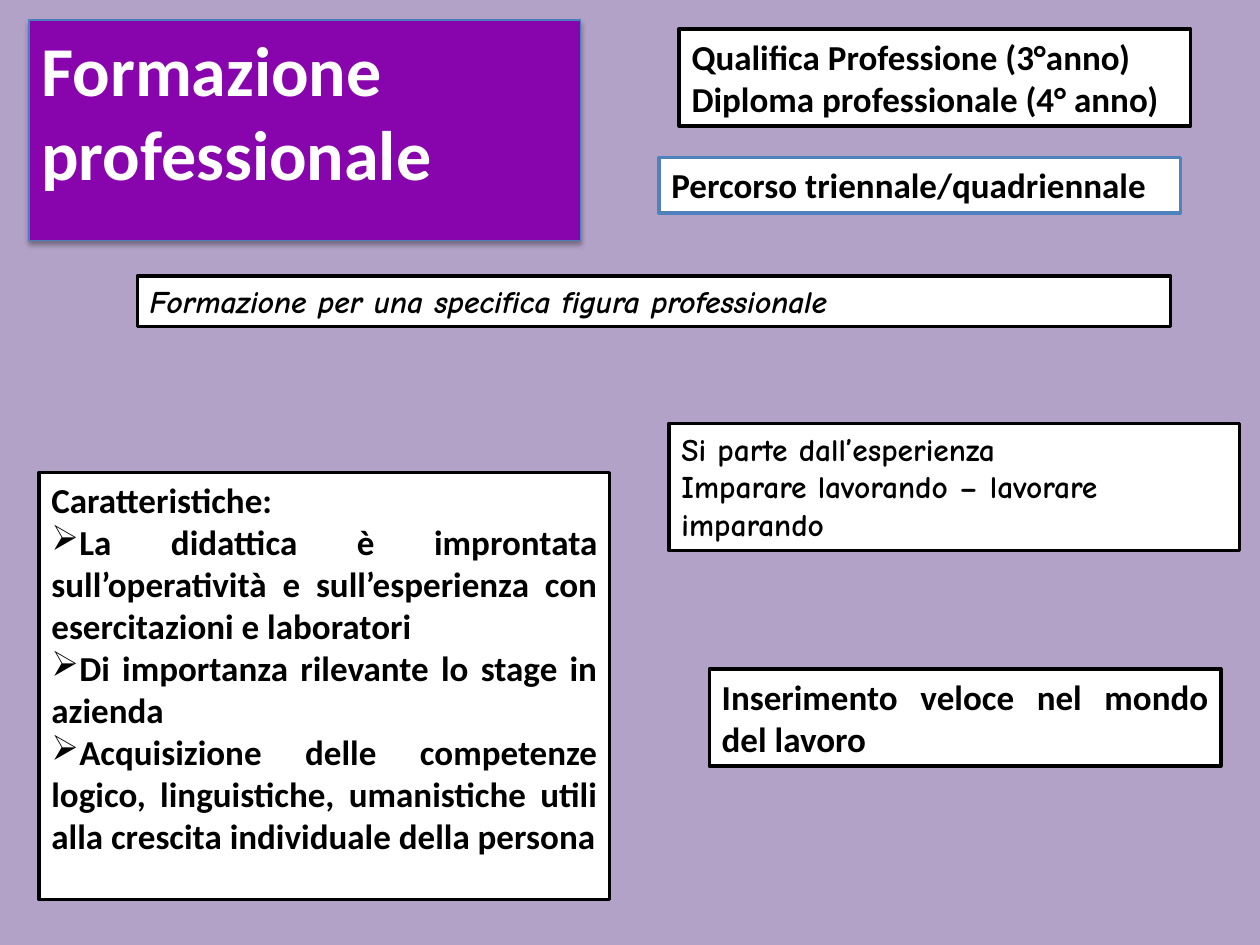
from lxml import etree
from pptx import Presentation
from pptx import util as u
from pptx.dml.color import RGBColor
from pptx.enum import shapes, text
from pptx.oxml import ns

LEFT, JUSTIFY = text.PP_ALIGN.LEFT, text.PP_ALIGN.JUSTIFY
BLACK, WHITE = "000000", "FFFFFF"
BULLET = "➢"


def color(value):
    return RGBColor.from_string(value)


def add_xml(parent, tag, **attributes):
    return etree.SubElement(parent, ns.qn(tag), attributes)


deck = Presentation()
deck.slide_width, deck.slide_height = u.Inches(10), u.Inches(7.5)
page = deck.slides.add_slide(deck.slide_layouts[6])
page.background.fill.solid()
page.background.fill.fore_color.rgb = color("B3A2C7")

# Text styles
body = {"name": "Calibri", "size": u.Pt(20), "bold": True}
comic = {"name": "Comic Neue", "size": u.Pt(18), "bold": True}
heading = body | {"size": u.Pt(40)}

# Boxes: place, fill, line colour, line width, text colour, alignment, style, paragraphs
boxes = [
    ((5.23, 1.25, 4.14, 0.44), WHITE, "4F81BD", 2, BLACK, LEFT, body,
     ["Percorso triennale/quadriennale"]),
    ((5.39, 0.23, 4.06, 0.77), WHITE, BLACK, 2, BLACK, LEFT, body,
     ["Qualifica Professione (3°anno)", "Diploma professionale (4° anno)"]),
    ((0.31, 3.75, 4.53, 3.39), WHITE, BLACK, 2, BLACK, JUSTIFY, body,
     ["Caratteristiche:",
      BULLET + "La didattica è improntata sull’operatività e sull’esperienza "
      "con esercitazioni e laboratori",
      BULLET + "Di importanza rilevante lo stage in azienda",
      BULLET + "Acquisizione delle competenze logico, linguistiche, umanistiche "
      "utili alla crescita individuale della persona"]),
    ((1.09, 2.19, 8.2, 0.4), WHITE, BLACK, 2, BLACK, LEFT, comic | {"italic": True},
     ["Formazione per una specifica figura professionale"]),
    ((5.31, 3.36, 4.53, 1.01), WHITE, BLACK, 2, BLACK, LEFT, comic,
     ["Si parte dall’esperienza", "Imparare lavorando – lavorare imparando"]),
    ((5.63, 5.31, 4.06, 0.77), WHITE, BLACK, 2, BLACK, JUSTIFY, body,
     ["Inserimento veloce nel mondo del lavoro"]),
    ((0.23, 0.16, 4.38, 1.75), "8804AC", "4B7EBC", 0.75, WHITE, LEFT, heading,
     ["Formazione professionale"]),
]

for place, fill, line, width, ink, alignment, style, lines in boxes:
    box = page.shapes.add_shape(shapes.MSO_SHAPE.RECTANGLE, *map(u.Inches, place))
    box.shadow.inherit = False
    box.fill.solid()
    box.fill.fore_color.rgb = color(fill)
    box.line.color.rgb = color(line)
    box.line.width = u.Pt(width)
    frame = box.text_frame
    frame.word_wrap = True
    frame.vertical_anchor = text.MSO_ANCHOR.TOP
    for index, words in enumerate(lines):
        para = frame.add_paragraph() if index else frame.paragraphs[0]
        para.alignment = alignment
        if words.startswith(BULLET):
            add_xml(para._p.get_or_add_pPr(), "a:buChar", char=BULLET)
        span = para.add_run()
        span.text = words.removeprefix(BULLET)
        span.font.color.rgb = color(ink)
        for key, value in style.items():
            setattr(span.font, key, value)

# Soft shadow below the heading, the last box
effects = box._element.spPr.find(ns.qn("a:effectLst"))
shadow = add_xml(effects, "a:outerShdw", blurRad=str(u.Pt(3.1)), dist=str(u.Pt(1.8)),
                 dir="5400000", rotWithShape="0")
shade = add_xml(shadow, "a:srgbClr", val=BLACK)
add_xml(shade, "a:alpha", val="35000")

deck.save("out.pptx")
